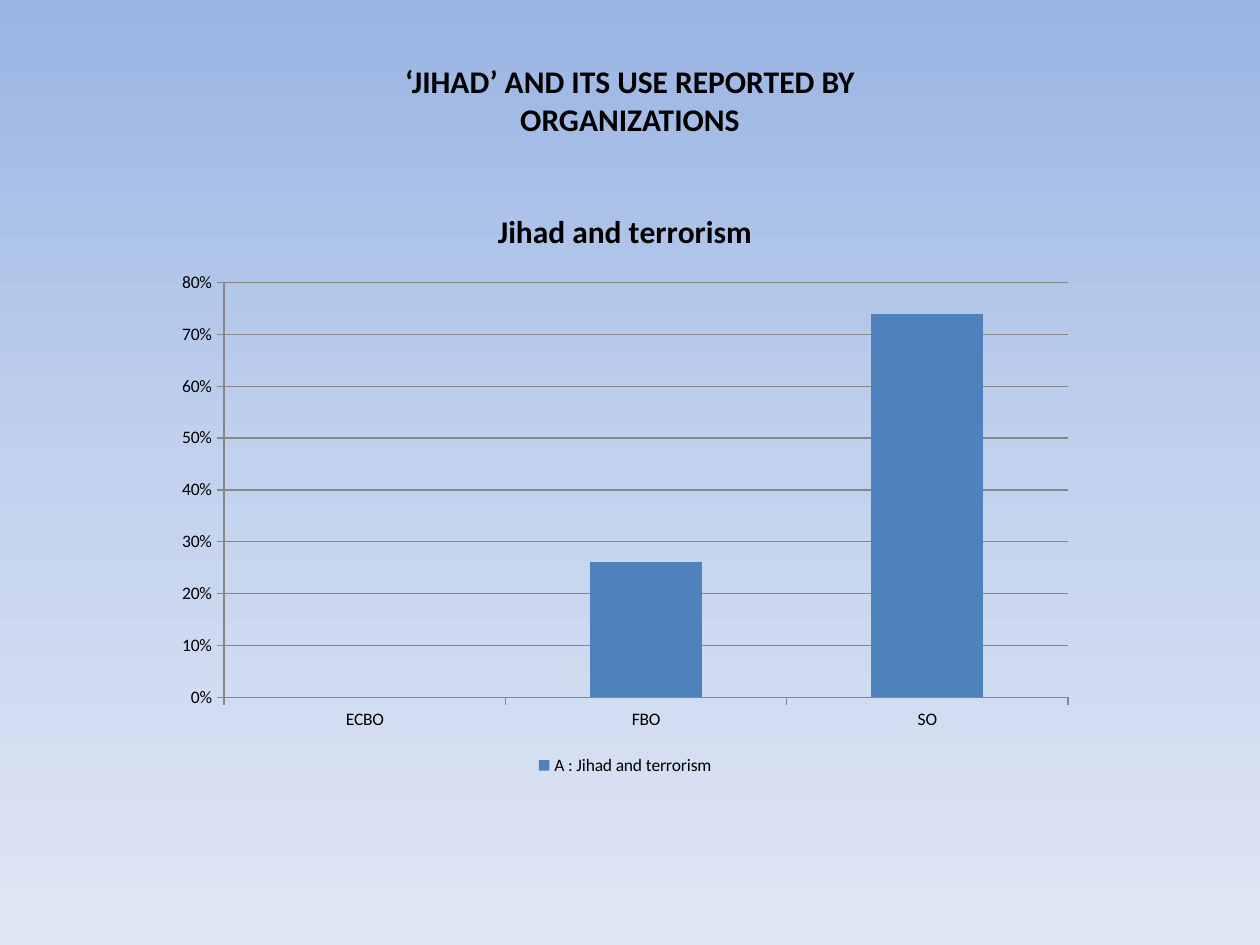
from copy import deepcopy
from dataclasses import dataclass

from pptx import Presentation
from pptx import util as u
from pptx.chart.data import CategoryChartData
from pptx.dml.color import RGBColor
from pptx.enum import chart as ch
from pptx.enum import text


@dataclass(frozen=True)
class Theme:
    font: str = "Calibri"
    ink: str = "000000"
    bar: str = "4F81BD"
    rule: str = "868686"
    background: tuple = ((0, "9AB5E4"), (0.5, "C2D1ED"), (1, "E1E8F5"))
    title_size: int = 18
    label_size: int = 10


class SlideBuilder:
    def __init__(self, prs, theme):
        self.theme = theme
        self.slide = prs.slides.add_slide(prs.slide_layouts[5])

    def style_font(self, font, size, bold=False):
        font.name = self.theme.font
        font.size = u.Pt(size)
        font.bold = bold
        font.color.rgb = RGBColor.from_string(self.theme.ink)

    def background(self):
        fill = self.slide.background.fill
        fill.gradient()
        fill.gradient_angle = 270
        stops = fill._fill._gradFill.gsLst
        stops.append(deepcopy(stops[-1]))
        for stop, (position, color) in zip(fill.gradient_stops, self.theme.background):
            stop.position = position
            stop.color.rgb = RGBColor.from_string(color)

    def title(self, wording, left, top, width, height):
        sp = self.slide.shapes.title
        sp.left, sp.top, sp.width, sp.height = map(u.Cm, (left, top, width, height))
        tf = sp.text_frame
        tf.word_wrap = True
        tf.auto_size = text.MSO_AUTO_SIZE.SHAPE_TO_FIT_TEXT
        tf.vertical_anchor = text.MSO_ANCHOR.TOP
        p = tf.paragraphs[0]
        p.alignment = text.PP_ALIGN.CENTER
        r = p.add_run()
        r.text = wording
        self.style_font(r.font, self.theme.title_size, True)

    def axis(self, axis):
        axis.major_tick_mark = ch.XL_TICK_MARK.OUTSIDE
        axis.minor_tick_mark = ch.XL_TICK_MARK.NONE
        self.line(axis.format.line)

    def line(self, line):
        line.color.rgb = RGBColor.from_string(self.theme.rule)
        line.width = u.Pt(0.75)

    def column_chart(self, heading, name, values, left, top, width, height):
        data = CategoryChartData(number_format="0%")
        data.categories = list(values)
        data.add_series(name, list(values.values()))
        chart = self.slide.shapes.add_chart(
            ch.XL_CHART_TYPE.COLUMN_CLUSTERED,
            *map(u.Cm, (left, top, width, height)), data).chart
        self.style_font(chart.font, self.theme.label_size)

        chart.has_title = True
        r = chart.chart_title.text_frame.paragraphs[0].add_run()
        r.text = heading
        self.style_font(r.font, self.theme.title_size, True)
        chart.chart_title.include_in_layout = False

        chart.has_legend = True
        chart.legend.position = ch.XL_LEGEND_POSITION.BOTTOM
        chart.legend.include_in_layout = False

        self.axis(chart.category_axis)
        value_axis = chart.value_axis
        self.axis(value_axis)
        value_axis.minimum_scale = 0
        value_axis.maximum_scale = 0.8
        value_axis.major_unit = 0.1
        value_axis.tick_labels.number_format = "0%"
        value_axis.tick_labels.number_format_is_linked = False
        value_axis.has_major_gridlines = True
        self.line(value_axis.major_gridlines.format.line)

        plot = chart.plots[0]
        plot.gap_width = 150
        plot.vary_by_categories = False
        fill = plot.series[0].format.fill
        fill.solid()
        fill.fore_color.rgb = RGBColor.from_string(self.theme.bar)


def main():
    prs = Presentation()
    prs.slide_width, prs.slide_height = u.Cm(25.4), u.Cm(19.05)
    s = SlideBuilder(prs, Theme())
    s.background()
    s.title("‘JIHAD’ AND ITS USE REPORTED BY ORGANIZATIONS", 6.35, 1.12, 12.7, 1.8)
    s.column_chart("Jihad and terrorism", "A : Jihad and terrorism",
                   {"ECBO": 0, "FBO": 0.26, "SO": 0.74}, 3.3, 3.73, 18.6, 12)
    prs.save("out.pptx")


if __name__ == "__main__":
    main()
